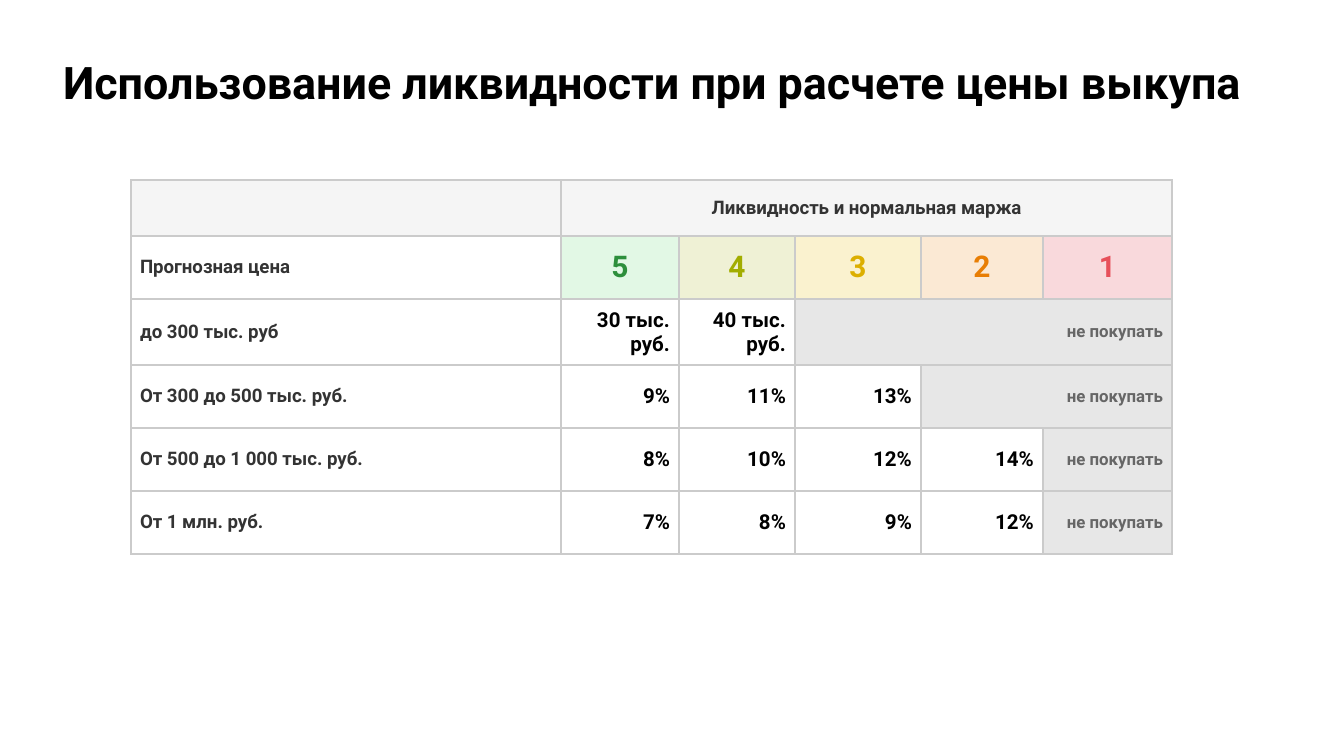
from lxml.etree import SubElement
from pptx import Presentation
from pptx.dml.color import RGBColor
from pptx.enum.text import MSO_ANCHOR, PP_ALIGN
from pptx.oxml.ns import qn

PX = 914400 / 134.4

BLACK = RGBColor(0x00, 0x00, 0x00)
DARK = RGBColor(0x33, 0x33, 0x33)
GRAY = RGBColor(0x66, 0x66, 0x66)
HEADER_FILL = RGBColor(0xF5, 0xF5, 0xF5)
REFUSAL_FILL = RGBColor(0xE7, 0xE7, 0xE7)
BORDER = RGBColor(0xCB, 0xCB, 0xCB)

TITLE = "Использование ликвидности при расчете цены выкупа"
MARGIN_HEADING = "Ликвидность и нормальная маржа"
PRICE_HEADING = "Прогнозная цена"
REFUSAL = "не покупать"

# Grade, text colour, fill colour, fill opacity in percent
GRADES = [
    ("5", RGBColor(0x2D, 0x8F, 0x3C), RGBColor(0xE2, 0xF8, 0xE5), 100),
    ("4", RGBColor(0xA2, 0xAD, 0x00), RGBColor(0xB6, 0xBE, 0x3A), 21),
    ("3", RGBColor(0xDC, 0xAF, 0x00), RGBColor(0xEA, 0xBE, 0x12), 20),
    ("2", RGBColor(0xE8, 0x7E, 0x04), RGBColor(0xE8, 0x7E, 0x04), 17),
    ("1", RGBColor(0xE7, 0x50, 0x5A), RGBColor(0xE7, 0x50, 0x5A), 21),
]
# Price range and its margins; the remaining grades are refused
PRICES = [
    ("до 300 тыс. руб", ["30 тыс. руб.", "40 тыс. руб."]),
    ("От 300 до 500 тыс. руб.", ["9%", "11%", "13%"]),
    ("От 500 до 1 000 тыс. руб.", ["8%", "10%", "12%", "14%"]),
    ("От 1 млн. руб.", ["7%", "8%", "9%", "12%"]),
]
COLUMN_WIDTHS = [430, 118, 116, 126, 122, 129]
ROW_HEIGHTS = [56, 63, 66, 63, 63, 63]


def px(value):
    return round(value * PX)


def set_margins(target, margin):
    target.margin_left = target.margin_right = px(margin)
    target.margin_top = target.margin_bottom = px(margin)


def add_text(paragraph, text, size=10, color=DARK, font="Roboto", align=PP_ALIGN.LEFT):
    paragraph.alignment = align
    run = paragraph.add_run()
    run.text = text
    run.font.name = font
    run.font.size = round(size * 12700)
    run.font.bold = True
    run.font.color.rgb = color


def fill_cell(cell, color, opacity=100):
    cell.fill.solid()
    cell.fill.fore_color.rgb = color
    if opacity < 100:
        color_element = cell._tc.tcPr.find(qn("a:solidFill"))[0]
        SubElement(color_element, qn("a:alpha"), val=str(opacity * 1000))


def prepare_cell(cell):
    """Set margins, borders and a small empty-line size, and clear the fill."""
    cell.vertical_anchor = MSO_ANCHOR.MIDDLE
    set_margins(cell, 9)
    for side in ("lnL", "lnR", "lnT", "lnB"):
        line = SubElement(cell._tc.tcPr, qn(f"a:{side}"), w="12700")
        fill = SubElement(line, qn("a:solidFill"))
        SubElement(fill, qn("a:srgbClr"), val=str(BORDER))
    cell.fill.background()
    paragraph = cell.text_frame.paragraphs[0]
    SubElement(paragraph._p, qn("a:endParaRPr"), sz="1000")


def write_cell(cell, text, **text_format):
    add_text(cell.text_frame.paragraphs[0], text, **text_format)


def add_title(slide):
    title = slide.shapes.title
    title.left, title.top, title.width, title.height = map(px, (50, 30, 1246, 95))
    frame = title.text_frame
    frame.word_wrap = True
    frame.vertical_anchor = MSO_ANCHOR.MIDDLE
    set_margins(frame, 13)
    frame.paragraphs[0].line_spacing = 1.15
    add_text(frame.paragraphs[0], TITLE, size=24, color=BLACK)


def add_margin_table(slide):
    size = (sum(COLUMN_WIDTHS), sum(ROW_HEIGHTS))
    table = slide.shapes.add_table(
        len(ROW_HEIGHTS), len(COLUMN_WIDTHS), *map(px, (131, 180, *size))
    ).table
    table.first_row = table.horz_banding = False
    for column, width in zip(table.columns, COLUMN_WIDTHS):
        column.width = px(width)
    for row, height in zip(table.rows, ROW_HEIGHTS):
        row.height = px(height)
    for cell in table.iter_cells():
        prepare_cell(cell)

    last = len(COLUMN_WIDTHS) - 1
    heading = table.cell(0, 1)
    heading.merge(table.cell(0, last))
    write_cell(heading, MARGIN_HEADING, align=PP_ALIGN.CENTER)
    for cell in (table.cell(0, 0), heading):
        fill_cell(cell, HEADER_FILL)

    write_cell(table.cell(1, 0), PRICE_HEADING)
    for column, (grade, color, fill, opacity) in enumerate(GRADES, 1):
        cell = table.cell(1, column)
        write_cell(cell, grade, size=16, color=color, align=PP_ALIGN.CENTER)
        fill_cell(cell, fill, opacity)

    for row, (price, margins) in enumerate(PRICES, 2):
        write_cell(table.cell(row, 0), price)
        for column, margin in enumerate(margins, 1):
            write_cell(table.cell(row, column), margin,
                       size=11, color=BLACK, align=PP_ALIGN.RIGHT)
        first_refused = len(margins) + 1
        refusal = table.cell(row, first_refused)
        if first_refused < last:
            refusal.merge(table.cell(row, last))
        write_cell(refusal, REFUSAL, size=9, color=GRAY, align=PP_ALIGN.RIGHT)
        fill_cell(refusal, REFUSAL_FILL)


def main():
    presentation = Presentation()
    presentation.slide_width, presentation.slide_height = px(1344), px(756)
    slide = presentation.slides.add_slide(presentation.slide_layouts[5])
    add_title(slide)
    add_margin_table(slide)
    presentation.save("out.pptx")


if __name__ == "__main__":
    main()
